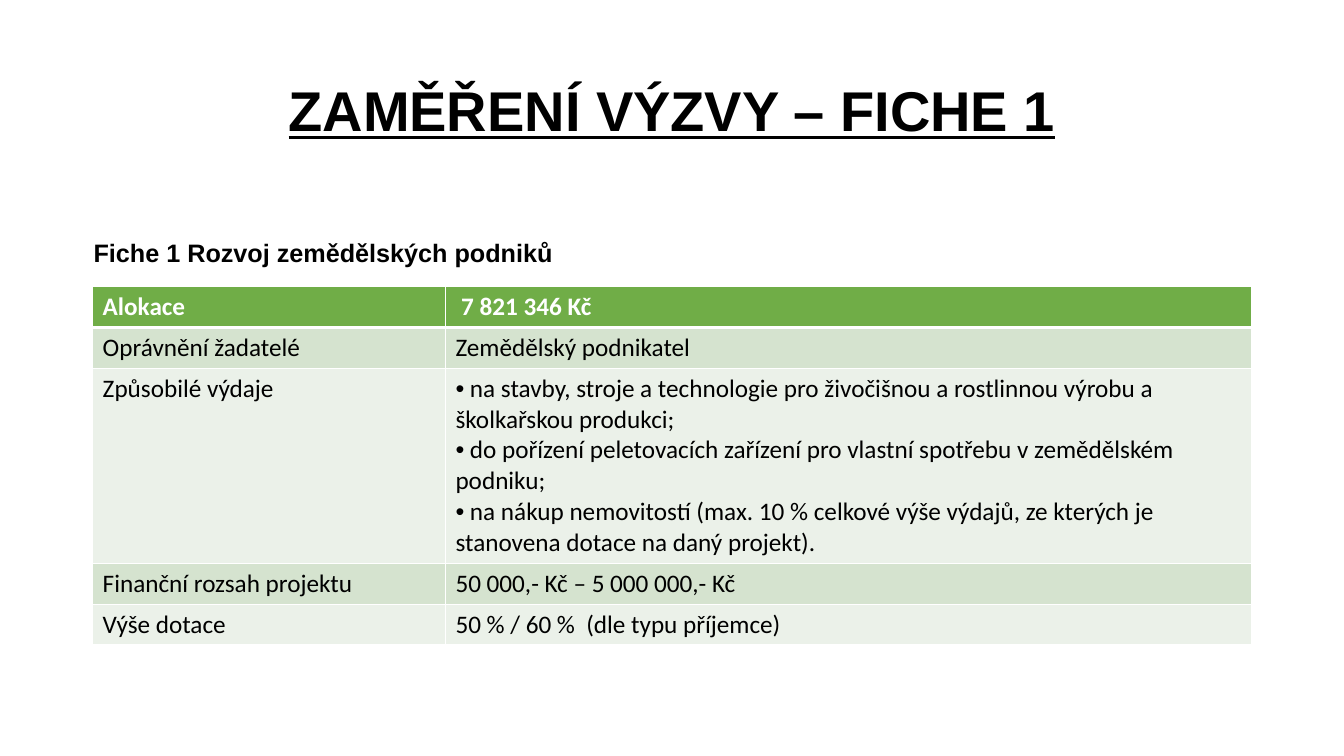
from lxml.etree import SubElement
from pptx import Presentation
from pptx.dml.color import RGBColor
from pptx.enum.text import MSO_ANCHOR, PP_ALIGN
from pptx.oxml.ns import qn
from pptx.util import Pt

BLACK, WHITE = "000000", "FFFFFF"
HEADER_GREEN, BAND_DARK, BAND_LIGHT = "70AD47", "D5E3CF", "EBF1E9"
COLUMN_WIDTHS = (252, 576)
ROW_HEIGHTS = (29.2, 29.2, 139.3, 29.2, 29.2)
CALL_DETAILS = [
    ("Alokace", [" 7 821 346 Kč"]),
    ("Oprávnění žadatelé", ["Zemědělský podnikatel"]),
    ("Způsobilé výdaje", [
        " na stavby, stroje a technologie pro živočišnou a rostlinnou výrobu a školkařskou produkci;",
        " do pořízení peletovacích zařízení pro vlastní spotřebu v zemědělském podniku;",
        " na nákup nemovitostí (max. 10 % celkové výše výdajů, ze kterých je stanovena dotace na daný projekt).",
    ]),
    ("Finanční rozsah projektu", ["50 000,- Kč – 5 000 000,- Kč"]),
    ("Výše dotace", ["50 % / 60 %  (dle typu příjemce)"]),
]


def rgb(value):
    """Turn a hex string into a colour."""
    return RGBColor.from_string(value)


def style(paragraph, size, font_name, color, bold):
    """Format every run of a paragraph."""
    for run in paragraph.runs:
        run.font.size = Pt(size)
        run.font.name = font_name
        run.font.bold = bold
        run.font.color.rgb = rgb(color)


def add_heading(slide, text, box, size, wrap=True):
    """Add a bold black Arial line and return its text frame."""
    frame = slide.shapes.add_textbox(*map(Pt, box)).text_frame
    frame.word_wrap = wrap
    frame.text = text
    style(frame.paragraphs[0], size, "Arial", BLACK, True)
    return frame


def add_bullet(paragraph):
    """Put a bullet in line with the paragraph text."""
    properties = paragraph._p.get_or_add_pPr()
    properties.set("marL", "0")
    properties.set("indent", "0")
    SubElement(properties, qn("a:buFont"), typeface="Arial")
    SubElement(properties, qn("a:buChar"), char="•")


def add_borders(cell, top, bottom):
    """Draw white borders around a cell, with widths in points."""
    properties = cell._tc.get_or_add_tcPr()
    for side, width in (("L", 1), ("R", 1), ("T", top), ("B", bottom)):
        line = SubElement(properties, qn(f"a:ln{side}"), w=str(Pt(width)))
        fill = SubElement(line, qn("a:solidFill"))
        SubElement(fill, qn("a:srgbClr"), val=WHITE)


def fill_cell(cell, lines, row):
    """Write and style one cell according to its row."""
    is_header = row == 0
    cell.text = "\n".join(lines)
    for paragraph in cell.text_frame.paragraphs:
        if len(lines) > 1:
            add_bullet(paragraph)
        style(paragraph, 18, "Calibri", WHITE if is_header else BLACK, is_header)
    add_borders(cell, 3 if row == 1 else 1, 3 if is_header else 1)
    band = BAND_DARK if row % 2 else BAND_LIGHT
    cell.fill.solid()
    cell.fill.fore_color.rgb = rgb(HEADER_GREEN if is_header else band)


def add_details_table(slide, left, top):
    """Add the table with the details of the call."""
    frame = slide.shapes.add_table(
        len(CALL_DETAILS), len(COLUMN_WIDTHS), Pt(left), Pt(top),
        Pt(sum(COLUMN_WIDTHS)), Pt(sum(ROW_HEIGHTS)))
    table = frame.table
    for column, width in zip(table.columns, COLUMN_WIDTHS):
        column.width = Pt(width)
    for row, (label, lines) in enumerate(CALL_DETAILS):
        table.rows[row].height = Pt(ROW_HEIGHTS[row])
        fill_cell(table.cell(row, 0), [label], row)
        fill_cell(table.cell(row, 1), lines, row)


def main():
    """Build the slide and save it."""
    presentation = Presentation()
    presentation.slide_width, presentation.slide_height = Pt(960), Pt(540)
    slide = presentation.slides.add_slide(presentation.slide_layouts[6])

    title = add_heading(slide, "ZAMĚŘENÍ VÝZVY – FICHE 1", (66, 28.8, 828, 104.4), 40)
    title.vertical_anchor = MSO_ANCHOR.MIDDLE
    title.paragraphs[0].alignment = PP_ALIGN.CENTER
    title.paragraphs[0].line_spacing = 0.9
    title.paragraphs[0].runs[0].font.underline = True

    add_details_table(slide, 66.2, 204.7)
    add_heading(slide, "Fiche 1 Rozvoj zemědělských podniků", (59.8, 165.6, 345.6, 29), 18, wrap=False)
    presentation.save("out.pptx")


if __name__ == "__main__":
    main()
